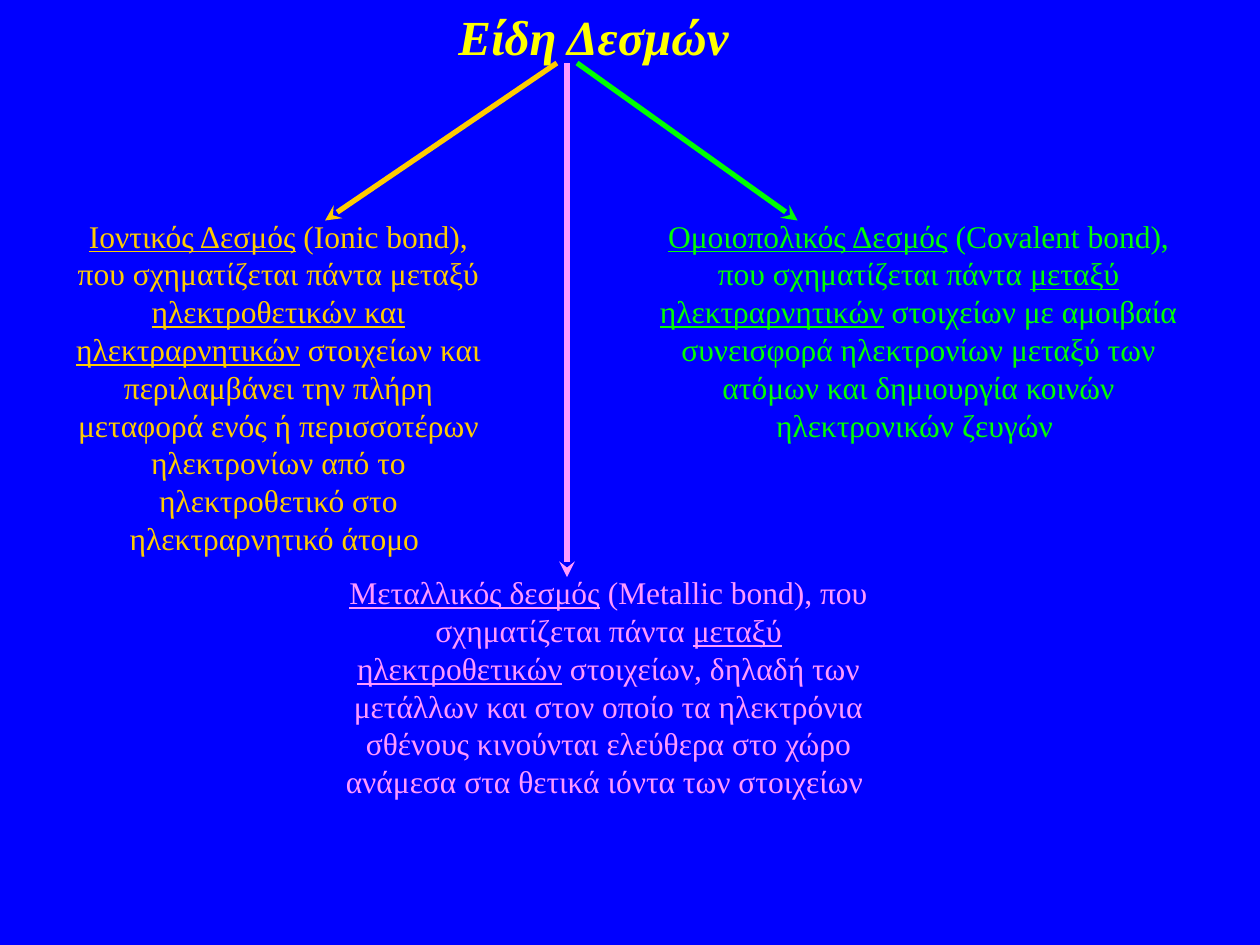
from lxml import etree
from pptx import Presentation
from pptx.dml.color import RGBColor
from pptx.enum.shapes import MSO_CONNECTOR
from pptx.enum.text import MSO_AUTO_SIZE, PP_ALIGN
from pptx.oxml.ns import qn
from pptx.util import Inches, Pt

BLUE, YELLOW = "0000FF", "FFFF00"
ORANGE, GREEN, PINK = "FFCC00", "00FF00", "FF99FF"

IONIC = [
    "_Ιοντικός Δεσμός_ (Ionic bond),",
    "που σχηματίζεται πάντα μεταξύ _ηλεκτροθετικών και ηλεκτραρνητικών_ "
    "στοιχείων και περιλαμβάνει την πλήρη μεταφορά ενός ή περισσοτέρων "
    "ηλεκτρονίων από το ηλεκτροθετικό στο ηλεκτραρνητικό άτομο ",
]
COVALENT = [
    "_Ομοιοπολικός Δεσμός_ (Covalent bond), που σχηματίζεται πάντα "
    "_μεταξύ ηλεκτραρνητικών_ στοιχείων με αμοιβαία συνεισφορά ηλεκτρονίων "
    "μεταξύ των ατόμων και δημιουργία κοινών ηλεκτρονικών ζευγών ",
]
METALLIC = [
    "_Μεταλλικός δεσμός_ (Metallic bond), που σχηματίζεται πάντα "
    "_μεταξύ ηλεκτροθετικών_ στοιχείων, δηλαδή των μετάλλων και στον οποίο "
    "τα ηλεκτρόνια σθένους κινούνται ελεύθερα στο χώρο ανάμεσα στα θετικά "
    "ιόντα των στοιχείων ",
]


def color(hex_code):
    return RGBColor.from_string(hex_code)


def add_text(page, place, paragraphs, hex_code, size=18):
    """Add centred text in which _underscores_ enclose underlined words."""
    box = page.shapes.add_textbox(*map(Inches, place))
    frame = box.text_frame
    frame.word_wrap = True
    frame.auto_size = MSO_AUTO_SIZE.SHAPE_TO_FIT_TEXT
    for index, text in enumerate(paragraphs):
        para = frame.add_paragraph() if index else frame.paragraphs[0]
        para.alignment = PP_ALIGN.CENTER
        para.font.name = "Times New Roman"
        para.font.size = Pt(size)
        para.font.color.rgb = color(hex_code)
        for part, words in enumerate(text.split("_")):
            if words:
                span = para.add_run()
                span.text = words
                if part % 2:
                    span.font.underline = True
    return frame


def add_title(page, text):
    frame = add_text(page, (0.75, 0, 7.92, 0.57), [text], YELLOW, 28)
    font = frame.paragraphs[0].font
    font.bold = font.italic = True


def indent_right(para, inches):
    para._p.get_or_add_pPr().set("marR", str(Inches(inches)))


def add_arrow(page, start, end, hex_code):
    arrow = page.shapes.add_connector(
        MSO_CONNECTOR.STRAIGHT, *map(Inches, start + end))
    arrow.line.color.rgb = color(hex_code)
    arrow.line.width = Pt(3)
    etree.SubElement(arrow.line._get_or_add_ln(), qn("a:tailEnd"), type="stealth")
    etree.SubElement(arrow._element.spPr, qn("a:effectLst"))


def main():
    deck = Presentation()
    deck.slide_width, deck.slide_height = Inches(10), Inches(7.5)
    page = deck.slides.add_slide(deck.slide_layouts[6])
    page.background.fill.solid()
    page.background.fill.fore_color.rgb = color(BLUE)

    add_title(page, "Είδη Δεσμών")
    ionic = add_text(page, (0.42, 1.67, 4.08, 2.2), IONIC, ORANGE)
    indent_right(ionic.paragraphs[0], 0.5)
    add_text(page, (5.08, 1.67, 4.42, 1.9), COVALENT, GREEN)
    add_text(page, (2.58, 4.5, 4.5, 1.9), METALLIC, PINK)

    add_arrow(page, (4.42, 0.5), (2.58, 1.75), ORANGE)
    add_arrow(page, (4.5, 0.5), (4.5, 4.58), PINK)
    add_arrow(page, (4.58, 0.5), (6.33, 1.75), GREEN)
    deck.save("out.pptx")


if __name__ == "__main__":
    main()
